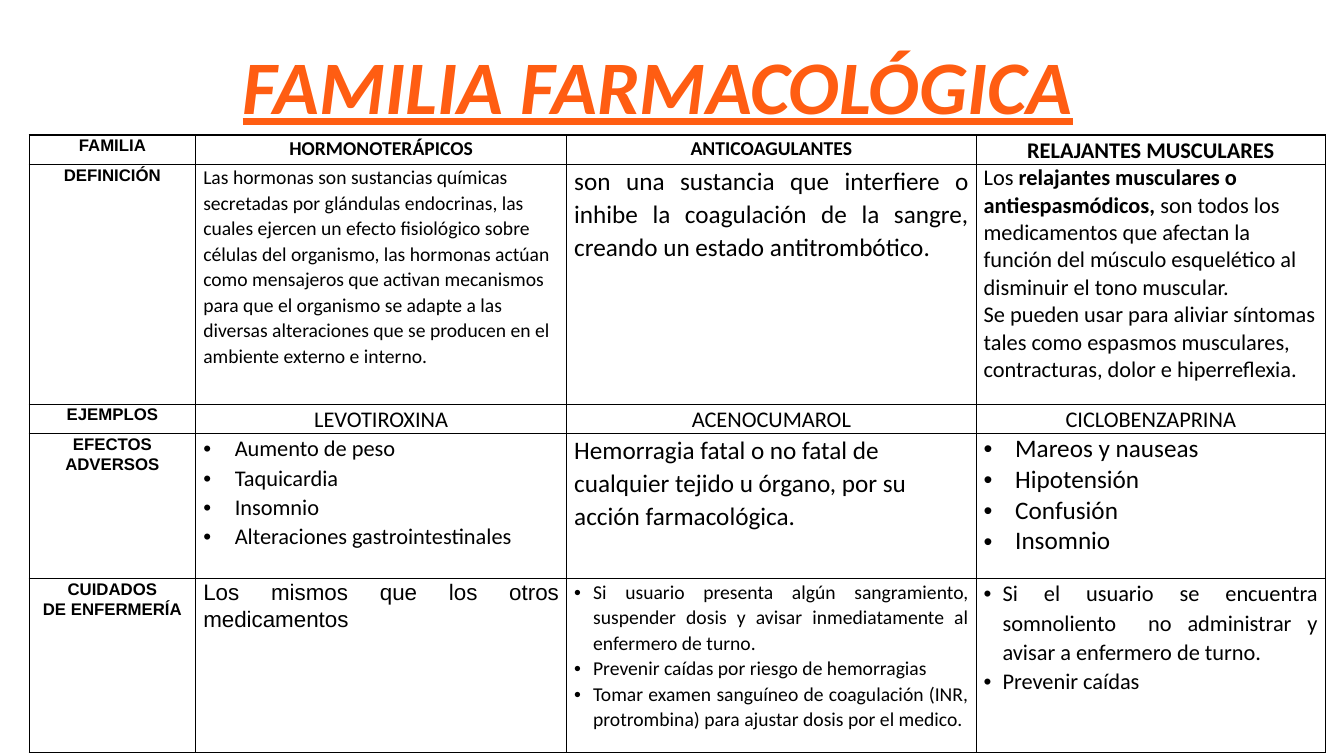
from dataclasses import dataclass

from lxml import etree
from pptx import Presentation
from pptx import util as u
from pptx.dml import color
from pptx.enum import text
from pptx.oxml import ns

BLACK, ORANGE = "000000", "FF5D12"
LEFT, CENTER, JUSTIFY = text.PP_ALIGN.LEFT, text.PP_ALIGN.CENTER, text.PP_ALIGN.JUSTIFY
WIDE_BULLET, NARROW_BULLET = 22.5, 13.5

COLUMN_WIDTHS = [119, 265, 292.5, 249.5]
ROW_HEIGHTS = [20.7, 171.4, 20.7, 103.6, 124]


@dataclass
class Entry:
    """Cell text; stretches between ** are bold."""
    paragraphs: list
    size: float = 16
    align: int = LEFT
    bullet: float = 0
    spacing: float = 1.07
    font: str = "Calibri"


def label(*paragraphs):
    return Entry([f"**{words}**" for words in paragraphs], 12, CENTER, font="Arial")


def heading(words, size=14):
    return Entry([f"**{words}**"], size, CENTER)


def example(words):
    return Entry([words], 16, CENTER)


ROWS = [
    [label("FAMILIA"), heading("HORMONOTERÁPICOS"), heading("ANTICOAGULANTES"),
     heading("RELAJANTES MUSCULARES", 16)],
    [label("DEFINICIÓN"),
     Entry(["Las hormonas son sustancias químicas secretadas por glándulas endocrinas, "
            "las cuales ejercen un efecto fisiológico sobre células del organismo, las "
            "hormonas actúan como mensajeros que activan mecanismos para que el organismo "
            "se adapte a las diversas alteraciones que se producen en el ambiente externo "
            "e interno."], 14),
     Entry(["son una sustancia que interfiere o inhibe la coagulación de la sangre, "
            "creando un estado antitrombótico."], 18, JUSTIFY),
     Entry(["Los **relajantes musculares o antiespasmódicos,** son todos "
            "los medicamentos que afectan la función del músculo esquelético al "
            "disminuir el tono muscular.",
            "Se pueden usar para aliviar síntomas tales como espasmos musculares, "
            "contracturas, dolor e hiperreflexia."], spacing=1.0)],
    [label("EJEMPLOS"), example("LEVOTIROXINA"), example("ACENOCUMAROL"),
     example("CICLOBENZAPRINA")],
    [label("EFECTOS ADVERSOS"),
     Entry(["Aumento de peso", "Taquicardia", "Insomnio",
            "Alteraciones gastrointestinales"], bullet=WIDE_BULLET),
     Entry(["Hemorragia fatal o no fatal de cualquier tejido u órgano, por su acción "
            "farmacológica."], 18),
     Entry(["Mareos y nauseas", "Hipotensión", "Confusión", "Insomnio"], 18,
           bullet=WIDE_BULLET, spacing=1.0)],
    [label("CUIDADOS", "DE ENFERMERÍA"),
     Entry(["Los mismos que los otros medicamentos"], 16, JUSTIFY, font="Arial"),
     Entry(["Si usuario presenta algún sangramiento, suspender dosis y avisar "
            "inmediatamente al enfermero de turno.",
            "Prevenir caídas por riesgo de hemorragias",
            "Tomar examen sanguíneo de coagulación (INR, protrombina) para ajustar "
            "dosis por el medico."], 14, JUSTIFY, NARROW_BULLET),
     Entry(["Si el usuario se encuentra somnoliento  no administrar y avisar a "
            "enfermero de turno.", "Prevenir caídas"], 16, JUSTIFY, NARROW_BULLET)],
]


def rgb(value):
    return color.RGBColor.from_string(value)


def add_run(paragraph, words, font, size, shade, bold):
    run = paragraph.add_run()
    run.text = words
    run.font.name = font
    run.font.size = u.Pt(size)
    run.font.bold = bold
    run.font.color.rgb = rgb(shade)
    return run


def set_bullet(paragraph, indent):
    properties = paragraph._p.get_or_add_pPr()
    properties.set("marL", str(u.Pt(indent)))
    properties.set("indent", str(-u.Pt(indent)))
    etree.SubElement(properties, ns.qn("a:buFont"), typeface="Arial")
    etree.SubElement(properties, ns.qn("a:buChar"), char="•")


def set_borders(cell, shade, width):
    properties = cell._tc.get_or_add_tcPr()
    for position, side in enumerate(("lnL", "lnR", "lnT", "lnB")):
        line = etree.Element(ns.qn(f"a:{side}"), w=str(u.Pt(width)))
        fill = etree.SubElement(line, ns.qn("a:solidFill"))
        etree.SubElement(fill, ns.qn("a:srgbClr"), val=shade)
        properties.insert(position, line)


def fill_cell(cell, entry):
    cell.margin_left = cell.margin_right = u.Pt(5.4)
    cell.margin_top = cell.margin_bottom = u.Pt(0)
    cell.vertical_anchor = text.MSO_ANCHOR.TOP
    cell.fill.background()
    set_borders(cell, BLACK, 1)
    frame = cell.text_frame
    for index, words in enumerate(entry.paragraphs):
        paragraph = frame.add_paragraph() if index else frame.paragraphs[0]
        paragraph.alignment = entry.align
        paragraph.line_spacing = entry.spacing
        if entry.bullet:
            set_bullet(paragraph, entry.bullet)
        for part, piece in enumerate(words.split("**")):
            if piece:
                add_run(paragraph, piece, entry.font, entry.size, BLACK, part % 2 == 1)


def place_title(slide, left, top, width, height):
    title = slide.shapes.title
    title.left, title.top = u.Pt(left), u.Pt(top)
    title.width, title.height = u.Pt(width), u.Pt(height)
    frame = title.text_frame
    frame.word_wrap = False
    frame.auto_size = text.MSO_AUTO_SIZE.NONE
    frame.vertical_anchor = text.MSO_ANCHOR.TOP
    paragraph = frame.paragraphs[0]
    paragraph.alignment = CENTER
    paragraph.line_spacing = 1.0
    run = add_run(paragraph, "FAMILIA FARMACOLÓGICA", "Calibri", 54, ORANGE, True)
    run.font.italic = run.font.underline = True


def place_drug_table(slide, left, top):
    table = slide.shapes.add_table(
        len(ROWS), len(COLUMN_WIDTHS), u.Pt(left), u.Pt(top),
        u.Pt(sum(COLUMN_WIDTHS)), u.Pt(sum(ROW_HEIGHTS))).table
    table.first_row = table.horz_banding = False
    for column, width in zip(table.columns, COLUMN_WIDTHS):
        column.width = u.Pt(width)
    for row, height, entries in zip(table.rows, ROW_HEIGHTS, ROWS):
        row.height = u.Pt(height)
        for cell, entry in zip(row.cells, entries):
            fill_cell(cell, entry)


def main():
    presentation = Presentation()
    presentation.slide_width, presentation.slide_height = u.Pt(960), u.Pt(540)
    slide = presentation.slides.add_slide(presentation.slide_layouts[5])
    # Heading above the comparison table
    place_title(slide, 162, 24, 616, 72.7)
    # Drug families by column, traits by row
    place_drug_table(slide, 20.8, 96.5)
    presentation.save("out.pptx")


if __name__ == "__main__":
    main()
